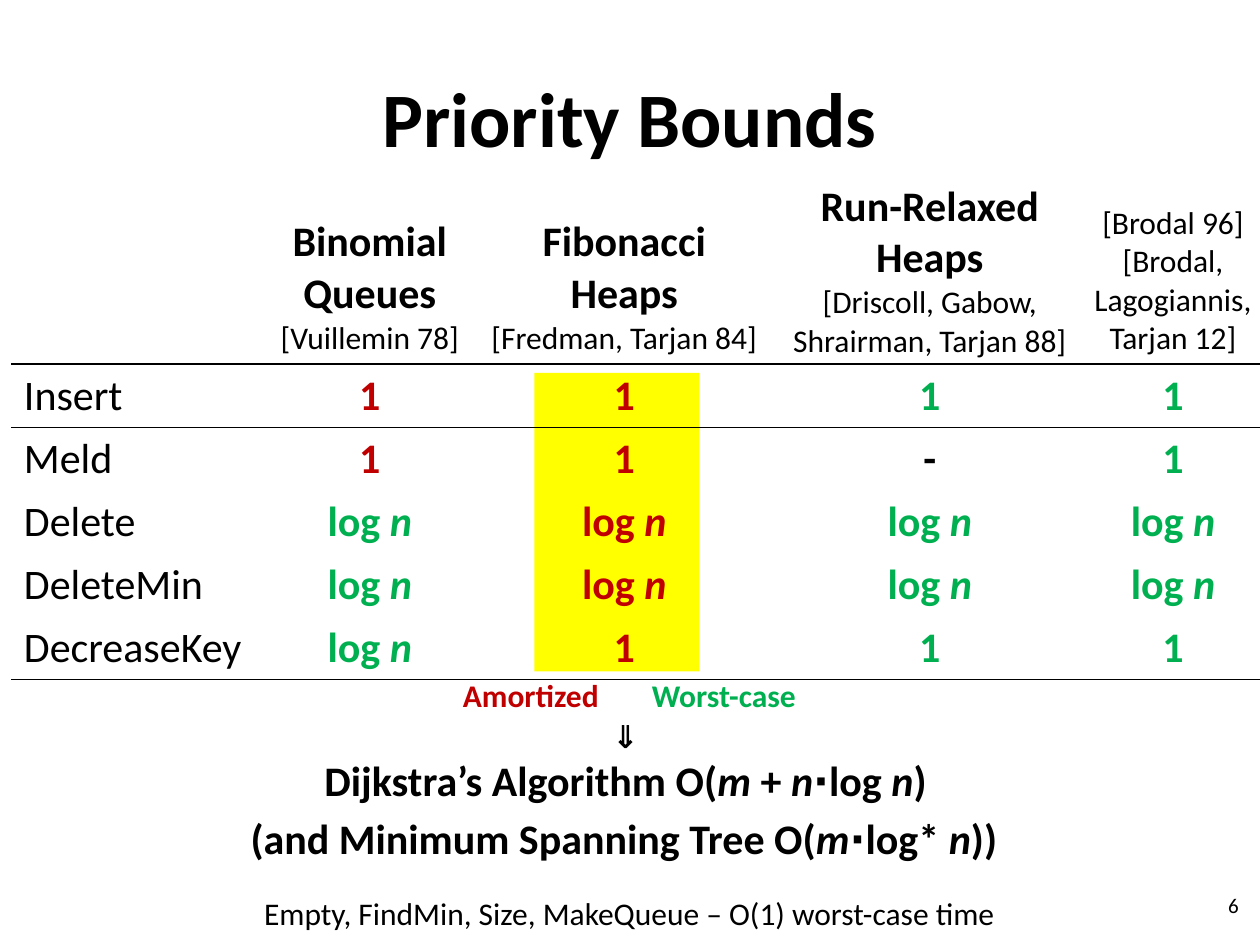
import pptx
import pptx.dml.color
import pptx.enum.shapes
import pptx.enum.text
import pptx.oxml
import pptx.oxml.ns
import pptx.util

Inches = pptx.util.Inches
RGBColor = pptx.dml.color.RGBColor
Align = pptx.enum.text.PP_ALIGN
Anchor = pptx.enum.text.MSO_ANCHOR

BLACK = RGBColor(0x00, 0x00, 0x00)
AMORTIZED = RGBColor(0xC0, 0x00, 0x00)
WORST_CASE = RGBColor(0x00, 0xB0, 0x50)
HIGHLIGHT = RGBColor(0xFF, 0xFF, 0x00)
COST_COLORS = {"a": AMORTIZED, "w": WORST_CASE, "": BLACK}

PLAIN_TABLE_STYLE = "{2D5ABB26-0587-4C30-8999-92F81FD0307C}"
COLUMN_WIDTHS = [2.01, 1.67, 2.37, 2.48, 1.38]
HEADER_HEIGHT = 1.5
ROW_HEIGHT = 0.5
RULED_ROWS = (0, 1, 5)

# Each heading: bold name lines, then citation lines.
HEADINGS = [
    (["Binomial", "Queues"], ["[Vuillemin 78]"]),
    (["Fibonacci", "Heaps"], ["[Fredman, Tarjan 84]"]),
    (["Run-Relaxed", "Heaps"], ["[Driscoll, Gabow,", "Shrairman, Tarjan 88]"]),
    ([], ["[Brodal 96]", "[Brodal, Lagogiannis, Tarjan 12]"]),
]

# Each cost: its bound and a for amortized or w for worst-case.
ONE_A, ONE_W = ("1", "a"), ("1", "w")
LOG_A, LOG_W = ("log _n_", "a"), ("log _n_", "w")
OPERATIONS = [
    ("Insert", [ONE_A, ONE_A, ONE_W, ONE_W]),
    ("Meld", [ONE_A, ONE_A, ("-", ""), ONE_W]),
    ("Delete", [LOG_W, LOG_A, LOG_W, LOG_W]),
    ("DeleteMin", [LOG_W, LOG_A, LOG_W, LOG_W]),
    ("DecreaseKey", [LOG_W, ONE_A, ONE_W, ONE_W]),
]


class SlideBuilder:
    def __init__(self, presentation, font_name):
        self.font_name = font_name
        self.slide = presentation.slides.add_slide(presentation.slide_layouts[5])

    def add_text(self, frame, text, size, bold=False, color=BLACK, align=Align.CENTER):
        """Add a paragraph; parts between underscores are italic."""
        paragraph = frame.paragraphs[-1]
        if paragraph.runs:
            paragraph = frame.add_paragraph()
        paragraph.alignment = align
        font = paragraph.font
        font.name = self.font_name
        font.size = pptx.util.Pt(size)
        font.bold = bold
        font.color.rgb = color
        for index, part in enumerate(text.split("_")):
            if part:
                run = paragraph.add_run()
                run.text = part
                if index % 2:
                    run.font.italic = True
        return paragraph

    def title(self, text, left, top, width, height):
        shape = self.slide.shapes.title
        shape.left, shape.top = Inches(left), Inches(top)
        shape.width, shape.height = Inches(width), Inches(height)
        shape.text_frame.vertical_anchor = Anchor.MIDDLE
        self.add_text(shape.text_frame, text, 44, bold=True)

    def text_box(self, left, top, width, height, anchor=Anchor.TOP):
        shape = self.slide.shapes.add_textbox(
            Inches(left), Inches(top), Inches(width), Inches(height))
        frame = shape.text_frame
        frame.word_wrap = True
        frame.vertical_anchor = anchor
        return frame

    def rectangle(self, left, top, width, height, color):
        shape = self.slide.shapes.add_shape(
            pptx.enum.shapes.MSO_SHAPE.RECTANGLE,
            Inches(left), Inches(top), Inches(width), Inches(height))
        shape.shadow.inherit = False
        shape.fill.solid()
        shape.fill.fore_color.rgb = color
        shape.line.fill.background()

    def plain_table(self, left, top, column_widths, row_heights):
        table = self.slide.shapes.add_table(
            len(row_heights), len(column_widths), Inches(left), Inches(top),
            Inches(sum(column_widths)), Inches(sum(row_heights))).table
        table.first_row = table.horz_banding = False
        table._tbl.tblPr.find(pptx.oxml.ns.qn("a:tableStyleId")).text = PLAIN_TABLE_STYLE
        for column, width in zip(table.columns, column_widths):
            column.width = Inches(width)
        for row, height in zip(table.rows, row_heights):
            row.height = Inches(height)
            for cell in row.cells:
                cell.fill.background()
        return table

    def rule_below(self, row):
        for cell in row.cells:
            border = pptx.oxml.parse_xml(
                f'<a:lnB {pptx.oxml.ns.nsdecls("a")} w="12700"><a:solidFill>'
                f'<a:srgbClr val="{BLACK}"/></a:solidFill></a:lnB>')
            cell._tc.get_or_add_tcPr().insert(0, border)


def add_bounds_table(builder):
    table = builder.plain_table(
        0.09, 1.39, COLUMN_WIDTHS, [HEADER_HEIGHT] + [ROW_HEIGHT] * len(OPERATIONS))

    for column, (names, citations) in enumerate(HEADINGS, start=1):
        cell = table.cell(0, column)
        cell.vertical_anchor = Anchor.BOTTOM
        for name in names:
            builder.add_text(cell.text_frame, name, 24, bold=True)
        for citation in citations:
            builder.add_text(cell.text_frame, citation, 18)
    last_heading = table.cell(0, len(HEADINGS))
    last_heading.margin_left = last_heading.margin_right = 0

    for row, (operation, costs) in enumerate(OPERATIONS, start=1):
        builder.add_text(table.cell(row, 0).text_frame, operation, 24, align=Align.LEFT)
        for column, (bound, kind) in enumerate(costs, start=1):
            builder.add_text(table.cell(row, column).text_frame, bound, 24,
                             bold=True, color=COST_COLORS[kind])

    for row in RULED_ROWS:
        builder.rule_below(table.rows[row])


def main():
    presentation = pptx.Presentation()
    presentation.slide_width = Inches(10)
    presentation.slide_height = Inches(7.5)
    builder = SlideBuilder(presentation, "Calibri")

    builder.title("Priority Bounds", 0.5, 0.3, 9, 1.25)
    builder.add_text(builder.text_box(1.49, 7.05, 7.01, 0.4),
                     "Empty, FindMin, Size, MakeQueue – O(1) worst-case time", 18)

    legend = builder.add_text(builder.text_box(2.32, 5.32, 5.35, 0.4),
                              "Amortized\t", 18, bold=True, color=AMORTIZED)
    worst_case = legend.add_run()
    worst_case.text = "Worst-case"
    worst_case.font.color.rgb = WORST_CASE

    builder.rectangle(4.24, 2.96, 1.31, 2.37, HIGHLIGHT)
    dijkstra = builder.text_box(1.65, 5.64, 6.63, 0.81)
    builder.add_text(dijkstra, "⇓", 18, bold=True)
    builder.add_text(dijkstra, "Dijkstra’s Algorithm O(_m _+ _n_∙log _n_)", 24, bold=True)

    add_bounds_table(builder)

    builder.add_text(builder.text_box(1.89, 6.4, 6.2, 0.5),
                     "(and Minimum Spanning Tree O(_m_∙log* _n_))", 24,
                     bold=True, align=Align.LEFT)
    builder.add_text(builder.text_box(7.6, 6.98, 2.33, 0.4, Anchor.MIDDLE),
                     "6", 12, align=Align.RIGHT)

    presentation.save("out.pptx")


if __name__ == "__main__":
    main()
